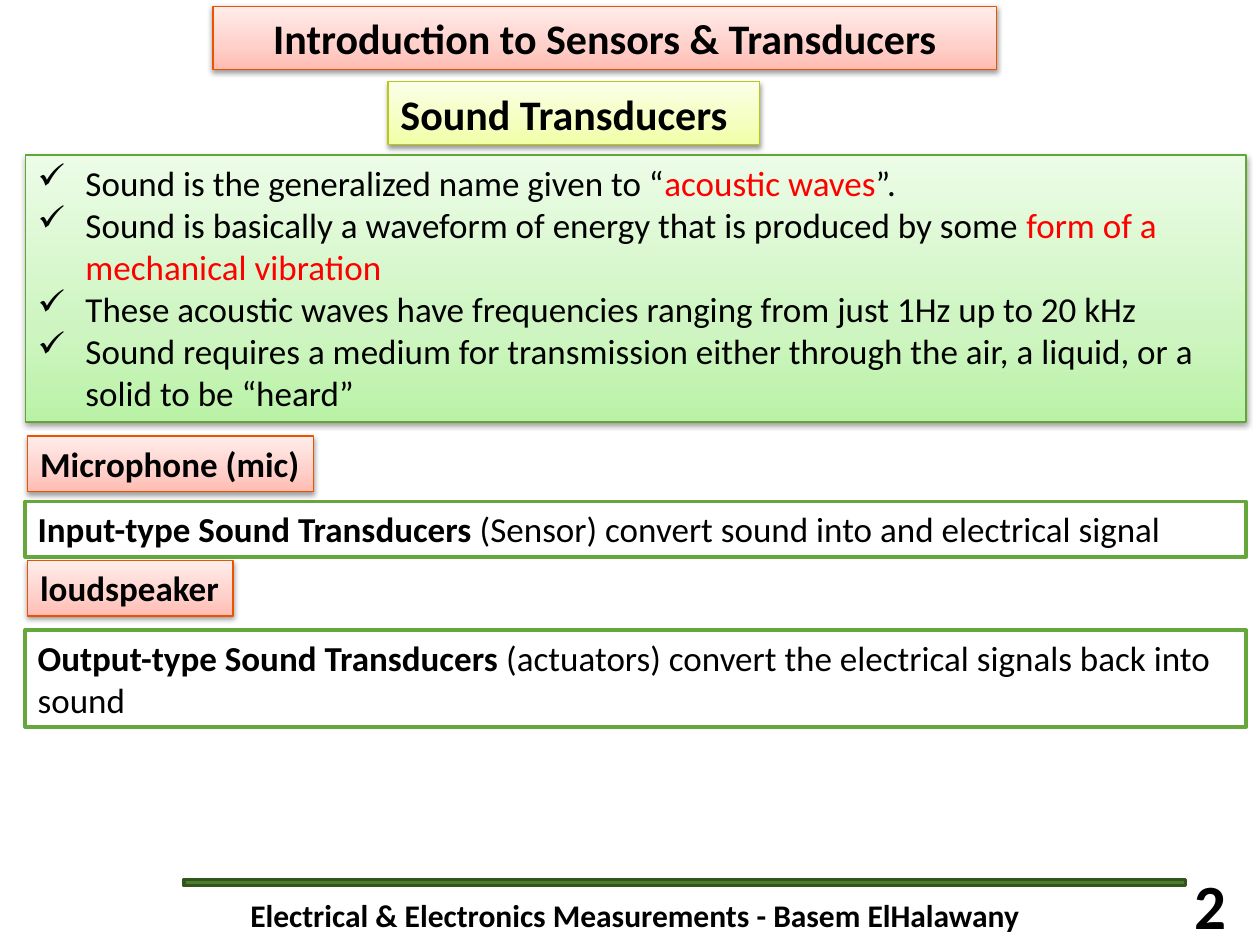
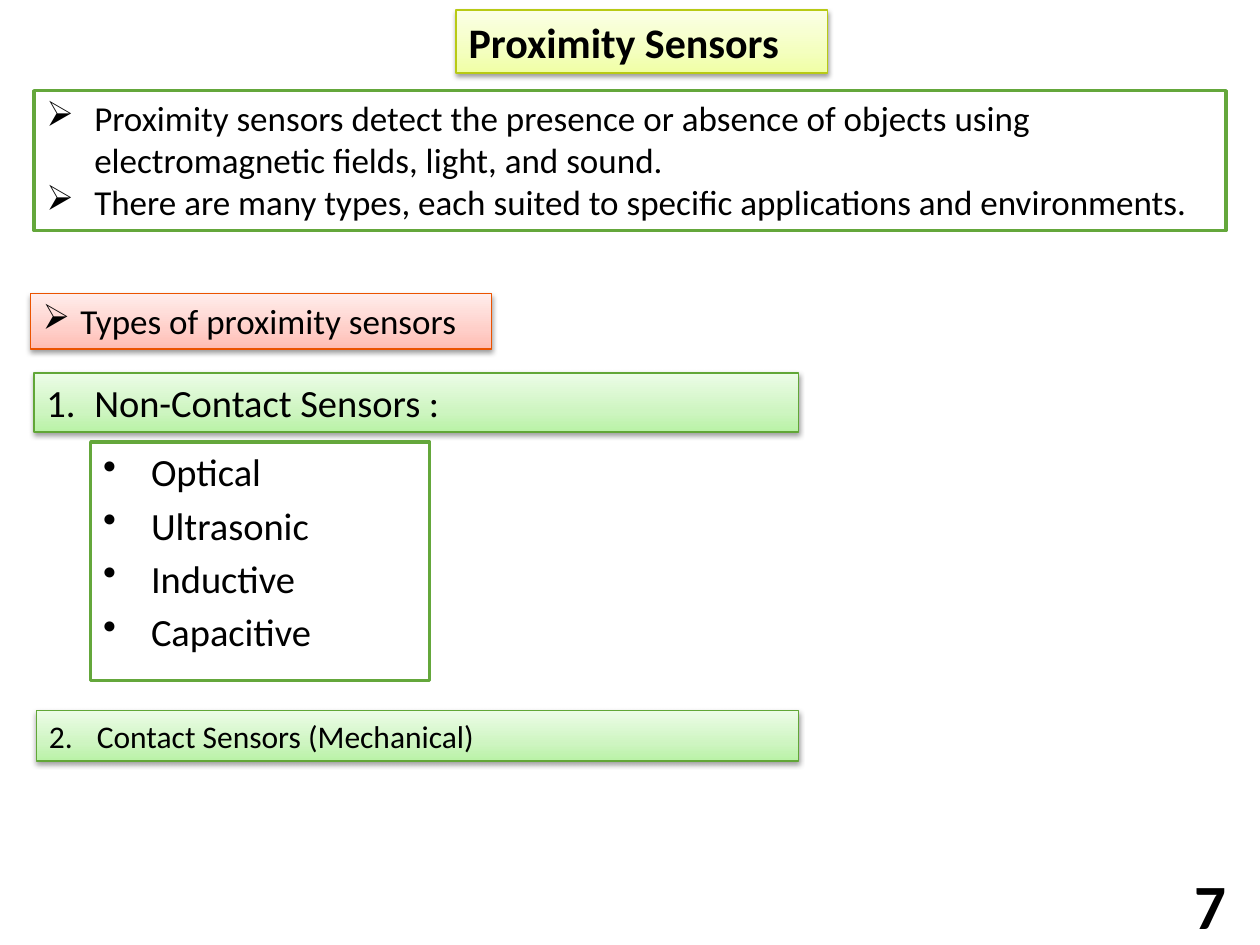
from copy import deepcopy

from lxml.etree import SubElement
from pptx import Presentation
from pptx.dml.color import RGBColor
from pptx.enum.shapes import MSO_SHAPE
from pptx.enum.text import MSO_ANCHOR, PP_ALIGN
from pptx.oxml.ns import qn
from pptx.util import Inches, Pt

FONT = "Calibri"
COLORS = {"text": "000000", "accent": "FF0000", "white": "FFFFFF", "outline": "64A73B",
          "rule": "4B7D2C", "rule edge": "32541D"}
# Gradient colours run from the bottom edge to the top edge.
GRADIENTS = {
    "red": {"line": "EB5300", "stops": ("FFBCB3", "FFCFC9", "FFEDEB")},
    "green": {"line": "61A637", "stops": ("B9F2A6", "CEF5C1", "ECFCE7")},
    "yellow": {"line": "B8CA15", "stops": ("F0FFA5", "F4FFBF", "FBFFE7")},
}
STOP_POSITIONS = (0, 0.35, 1)
HANGING = 0.38

# A paragraph is a string, or a list of (text, emphasis) runs.
SLIDES = [
    {
        "number": "2",
        "footer": "Electrical & Electronics Measurements - Basem ElHalawany",
        "boxes": [
            {"style": "red", "at": (1.69, 0.05, 6.22, 0.5), "size": 24, "bold": True,
             "align": PP_ALIGN.CENTER, "text": ["Introduction to Sensors & Transducers"]},
            {"style": "green", "at": (0.2, 1.23, 9.69, 2.12), "bullet": "✓", "text": [
                [("Sound is the generalized name given to “", None),
                 ("acoustic waves", "accent"), ("”.", None)],
                [("Sound is basically a waveform of energy that is produced by some ", None),
                 ("form of a mechanical vibration", "accent")],
                "These acoustic waves have frequencies ranging from just 1Hz up to 20 kHz",
                "Sound requires a medium for transmission either through the air, a liquid, "
                "or a solid to be “heard”"]},
            {"style": "yellow", "at": (3.08, 0.65, 2.95, 0.5), "size": 24, "bold": True,
             "text": ["Sound Transducers"]},
            {"style": "outline", "at": (0.2, 3.98, 9.69, 0.44), "text": [
                [("Input-type Sound Transducers", "bold"),
                 (" (Sensor) convert sound into and electrical signal", None)]]},
            {"style": "red", "at": (0.22, 3.46, 2.27, 0.44), "bold": True, "wrap": False,
             "text": ["Microphone (mic)"]},
            {"style": "outline", "at": (0.2, 5, 9.69, 0.77), "text": [
                [("Output-type Sound Transducers", "bold"),
                 (" (actuators) convert the electrical signals back into sound", None)]]},
            {"style": "red", "at": (0.22, 4.45, 1.63, 0.44), "bold": True, "wrap": False,
             "text": ["loudspeaker"]},
        ],
    },
    {
        "number": "7",
        "footer": None,
        "boxes": [
            {"style": "yellow", "at": (3.62, 0.08, 2.95, 0.5), "size": 24, "bold": True,
             "text": ["Proximity Sensors"]},
            {"style": "red", "at": (0.24, 2.33, 3.66, 0.44), "bullet": "➢", "indent": 0.3,
             "text": ["Types of proximity sensors"]},
            {"style": "green", "at": (0.27, 2.96, 6.07, 0.47), "size": 22, "bullet": 1,
             "text": ["Non-Contact Sensors :"]},
            {"style": "outline", "at": (0.72, 3.51, 2.69, 1.89), "size": 22, "bullet": "•",
             "space": 4, "text": ["Optical", "Ultrasonic", "Inductive", "Capacitive"]},
            {"style": "outline", "at": (0.27, 0.72, 9.46, 1.11), "bullet": "➢", "text": [
                "Proximity sensors detect the presence or absence of objects using "
                "electromagnetic fields, light, and sound.",
                "There are many types, each suited to specific applications and environments."]},
            {"style": "green", "at": (0.29, 5.64, 6.05, 0.4), "size": 18, "bullet": 2,
             "text": ["Contact Sensors (Mechanical)"]},
        ],
    },
]


def rgb(name):
    return RGBColor.from_string(COLORS[name])


def add_bullet(paragraph, bullet, indent):
    """Hang the paragraph from a symbol, or from a number when bullet is an int."""
    properties = paragraph._p.get_or_add_pPr()
    properties.set("marL", str(Inches(indent)))
    properties.set("indent", str(-Inches(indent)))
    if isinstance(bullet, int):
        SubElement(properties, qn("a:buAutoNum"), type="arabicPeriod", startAt=str(bullet))
    else:
        SubElement(properties, qn("a:buChar"), char=bullet)


def write_text(frame, paragraphs, size=20, bold=False, align=PP_ALIGN.LEFT, bullet=None,
               indent=HANGING, space=0, wrap=True, anchor=MSO_ANCHOR.TOP):
    frame.word_wrap = wrap
    frame.vertical_anchor = anchor
    for index, runs in enumerate(paragraphs):
        paragraph = frame.add_paragraph() if index else frame.paragraphs[0]
        paragraph.alignment = align
        if index and space:
            paragraph.space_before = Pt(space)
        if bullet is not None:
            add_bullet(paragraph, bullet, indent)
        font = paragraph.font
        font.name, font.size, font.bold = FONT, Pt(size), bold
        font.color.rgb = rgb("text")
        for text, emphasis in [(runs, None)] if isinstance(runs, str) else runs:
            run = paragraph.add_run()
            run.text = text
            if emphasis == "bold":
                run.font.bold = True
            elif emphasis:
                run.font.color.rgb = rgb(emphasis)


def add_rectangle(slide, at, fill, line, width):
    shape = slide.shapes.add_shape(MSO_SHAPE.RECTANGLE, *map(Inches, at))
    shape.shadow.inherit = False
    shape.fill.solid()
    shape.fill.fore_color.rgb = rgb(fill)
    shape.line.color.rgb = rgb(line)
    shape.line.width = Pt(width)
    return shape


def apply_gradient(shape, gradient):
    """Give the shape a three-stop gradient, a thin line and a soft shadow below."""
    shape.line.color.rgb = RGBColor.from_string(gradient["line"])
    shape.line.width = Pt(0.75)
    shape.fill.gradient()
    shape.fill.gradient_angle = 90
    properties = shape._element.spPr
    stop_list = properties.find(".//" + qn("a:gsLst"))
    stop_list.append(deepcopy(stop_list[0]))
    for stop, position, color in zip(shape.fill.gradient_stops, STOP_POSITIONS,
                                     gradient["stops"]):
        stop.position = position
        stop.color.rgb = RGBColor.from_string(color)
    shadow = SubElement(properties.find(qn("a:effectLst")), qn("a:outerShdw"),
                        blurRad=str(Pt(3.1)), dist=str(Pt(1.6)), dir="5400000",
                        rotWithShape="0")
    color = SubElement(shadow, qn("a:srgbClr"), val=COLORS["text"])
    SubElement(color, qn("a:alpha"), val="38000")


def add_box(slide, style, at, text, **text_options):
    shape = add_rectangle(slide, at, "white", "outline", 2)
    if style in GRADIENTS:
        apply_gradient(shape, GRADIENTS[style])
    write_text(shape.text_frame, text, **text_options)


def add_label(slide, at, text, size, align):
    label = slide.shapes.add_textbox(*map(Inches, at))
    write_text(label.text_frame, [text], size=size, bold=True, align=align,
               anchor=MSO_ANCHOR.MIDDLE)


def build_slide(presentation, content):
    slide = presentation.slides.add_slide(presentation.slide_layouts[6])
    if content["footer"]:
        add_label(slide, (1.77, 7.06, 6.54, 0.4), content["footer"], 18, PP_ALIGN.CENTER)
        add_rectangle(slide, (1.46, 6.98, 7.95, 0.05), "rule", "rule edge", 2)
    add_label(slide, (9.02, 6.98, 0.81, 0.4), content["number"], 36, PP_ALIGN.RIGHT)
    for box in content["boxes"]:
        add_box(slide, **box)


def main():
    presentation = Presentation()
    presentation.slide_width, presentation.slide_height = Inches(10), Inches(7.5)
    for content in SLIDES:
        build_slide(presentation, content)
    presentation.save("out.pptx")


if __name__ == "__main__":
    main()
